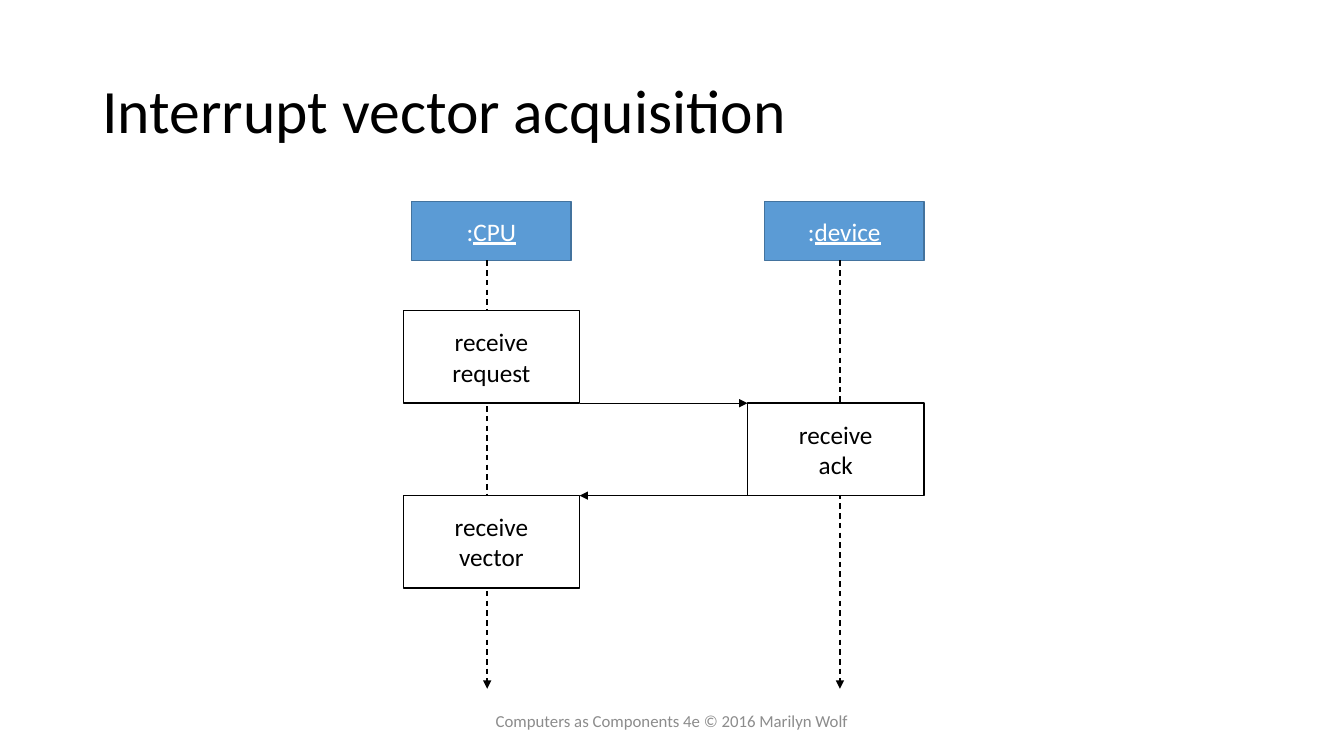
from dataclasses import dataclass

from lxml import etree
from pptx import Presentation
from pptx.dml.color import RGBColor
from pptx.enum.dml import MSO_LINE
from pptx.enum.shapes import MSO_CONNECTOR, MSO_SHAPE
from pptx.enum.text import MSO_ANCHOR, MSO_AUTO_SIZE, PP_ALIGN
from pptx.oxml.ns import qn
from pptx.util import Pt

RECTANGLE = MSO_SHAPE.RECTANGLE
STRAIGHT = MSO_CONNECTOR.STRAIGHT
DASH = MSO_LINE.DASH
MIDDLE = MSO_ANCHOR.MIDDLE
NO_AUTOFIT = MSO_AUTO_SIZE.NONE
LEFT, CENTER = PP_ALIGN.LEFT, PP_ALIGN.CENTER
TITLE_ONLY = 5


@dataclass(frozen=True)
class Theme:
    font: str = "Calibri"
    ink: RGBColor = RGBColor(0x00, 0x00, 0x00)
    paper: RGBColor = RGBColor(0xFF, 0xFF, 0xFF)
    header_fill: RGBColor = RGBColor(0x5B, 0x9B, 0xD5)
    header_edge: RGBColor = RGBColor(0x43, 0x73, 0x9E)
    muted: RGBColor = RGBColor(0x8C, 0x8C, 0x8C)
    title_size: int = 44
    label_size: int = 18
    footer_size: int = 12
    stroke: int = 1


THEME = Theme()

HEADER_TOP, HEADER_WIDTH, HEADER_HEIGHT = 144, 114, 42
LIFELINE_TOP, LIFELINE_BOTTOM = HEADER_TOP + HEADER_HEIGHT, 492
LIFELINE_INSET = 54
CPU_LEFT, DEVICE_LEFT = 294, 546
STATE_TOP, STATE_WIDTH, STATE_HEIGHT = 222, 126, 66
CPU_STATE_LEFT, DEVICE_STATE_LEFT = 288, 534


def apply_format(target, values):
    for attribute, value in values.items():
        setattr(target, attribute, value)


def write_run(paragraph, text, size, color, underline=None):
    run = paragraph.add_run()
    run.text = text
    apply_format(run.font, {"name": THEME.font, "size": Pt(size), "underline": underline})
    run.font.color.rgb = color


def add_box(slide, left, top, width, height, fill, edge):
    box = slide.shapes.add_shape(RECTANGLE, Pt(left), Pt(top), Pt(width), Pt(height))
    box.shadow.inherit = False
    box.fill.solid()
    box.fill.fore_color.rgb = fill
    box.line.color.rgb = edge
    box.line.width = Pt(THEME.stroke)
    apply_format(box.text_frame, {"word_wrap": False, "vertical_anchor": MIDDLE})
    return box.text_frame


def add_arrow(slide, x1, y1, x2, y2, dashed=False):
    arrow = slide.shapes.add_connector(STRAIGHT, Pt(x1), Pt(y1), Pt(x2), Pt(y2))
    arrow.line.color.rgb = THEME.ink
    arrow.line.width = Pt(THEME.stroke)
    if dashed:
        arrow.line.dash_style = DASH
    properties = arrow.element.spPr
    etree.SubElement(properties.find(qn("a:ln")), qn("a:tailEnd"), type="triangle")
    etree.SubElement(properties, qn("a:effectLst"))


def add_participant(slide, name, left):
    frame = add_box(slide, left, HEADER_TOP, HEADER_WIDTH, HEADER_HEIGHT,
                    THEME.header_fill, THEME.header_edge)
    label = frame.paragraphs[0]
    label.alignment = CENTER
    write_run(label, ":", THEME.label_size, THEME.paper)
    write_run(label, name, THEME.label_size, THEME.paper, underline=True)
    lifeline = left + LIFELINE_INSET
    add_arrow(slide, lifeline, LIFELINE_TOP, lifeline, LIFELINE_BOTTOM, dashed=True)


def add_state(slide, words, left, top):
    frame = add_box(slide, left, top, STATE_WIDTH, STATE_HEIGHT, THEME.paper, THEME.ink)
    for index, word in enumerate(words):
        line = frame.add_paragraph() if index else frame.paragraphs[0]
        line.alignment = CENTER
        write_run(line, word, THEME.label_size, THEME.ink)


def set_title(slide, text):
    title = slide.shapes.title
    apply_format(title, {"left": Pt(66), "top": Pt(28.75), "width": Pt(828), "height": Pt(104.4)})
    apply_format(title.text_frame, {"word_wrap": True, "vertical_anchor": MIDDLE,
                                    "auto_size": NO_AUTOFIT})
    heading = title.text_frame.paragraphs[0]
    apply_format(heading, {"alignment": LEFT, "line_spacing": 0.9})
    write_run(heading, text, THEME.title_size, THEME.ink)


def add_footer(slide, text):
    footer = slide.shapes.add_textbox(Pt(318), Pt(500.5), Pt(324), Pt(28.75))
    apply_format(footer.text_frame, {"word_wrap": True, "vertical_anchor": MIDDLE})
    credit = footer.text_frame.paragraphs[0]
    credit.alignment = CENTER
    write_run(credit, text, THEME.footer_size, THEME.muted)


def main():
    deck = Presentation()
    apply_format(deck, {"slide_width": Pt(960), "slide_height": Pt(540)})
    slide = deck.slides.add_slide(deck.slide_layouts[TITLE_ONLY])

    set_title(slide, "Interrupt vector acquisition")
    for name, left in (("CPU", CPU_LEFT), ("device", DEVICE_LEFT)):
        add_participant(slide, name, left)

    states = (
        (("receive", "request"), CPU_STATE_LEFT),
        (("receive", "ack"), DEVICE_STATE_LEFT),
        (("receive", "vector"), CPU_STATE_LEFT),
    )
    for step, (words, left) in enumerate(states):
        add_state(slide, words, left, STATE_TOP + step * STATE_HEIGHT)

    cpu_edge = CPU_STATE_LEFT + STATE_WIDTH
    request_end = STATE_TOP + STATE_HEIGHT
    ack_end = request_end + STATE_HEIGHT
    add_arrow(slide, cpu_edge, request_end, DEVICE_STATE_LEFT, request_end)
    add_arrow(slide, DEVICE_STATE_LEFT, ack_end, cpu_edge, ack_end)

    add_footer(slide, "Computers as Components 4e © 2016 Marilyn Wolf")
    deck.save("out.pptx")


if __name__ == "__main__":
    main()
